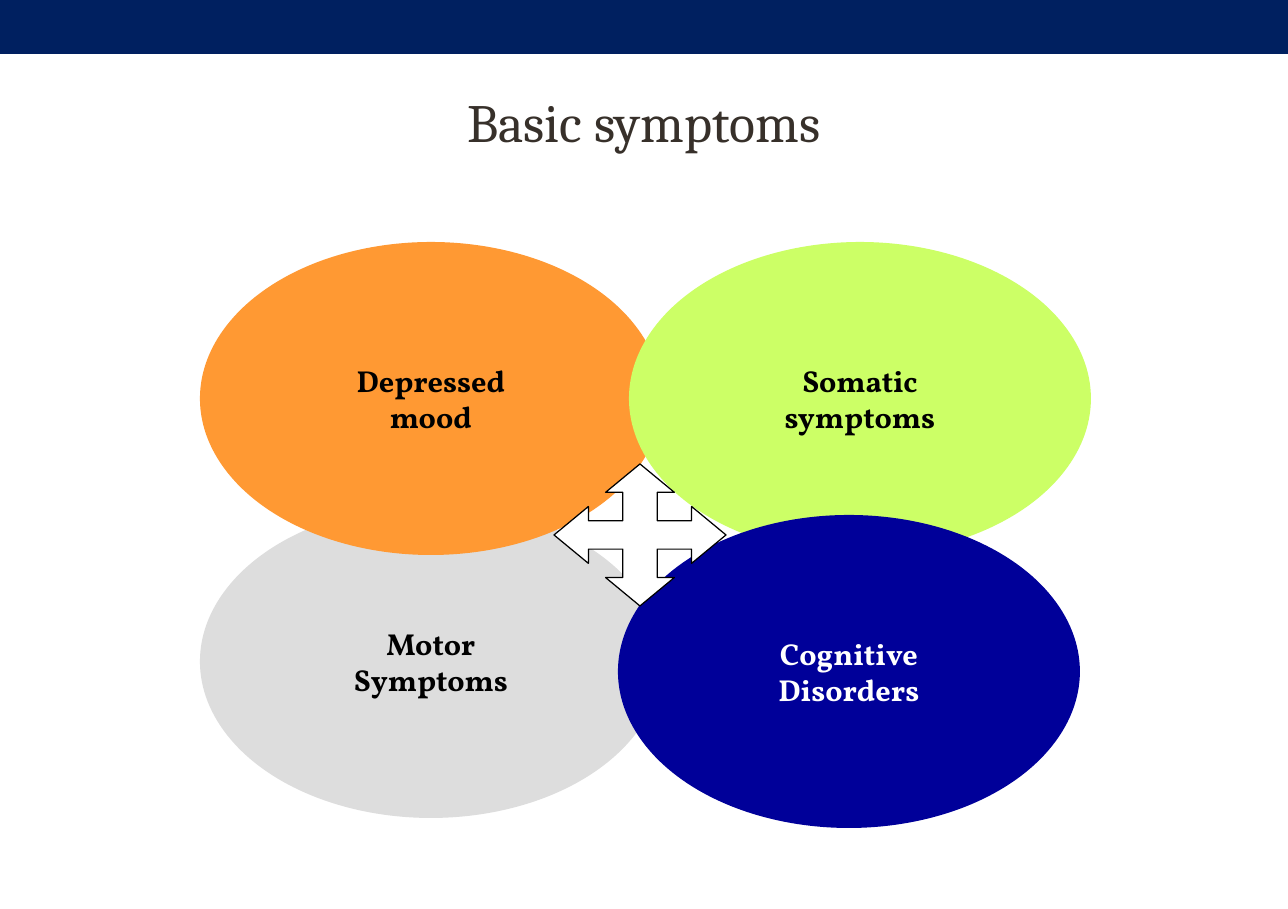
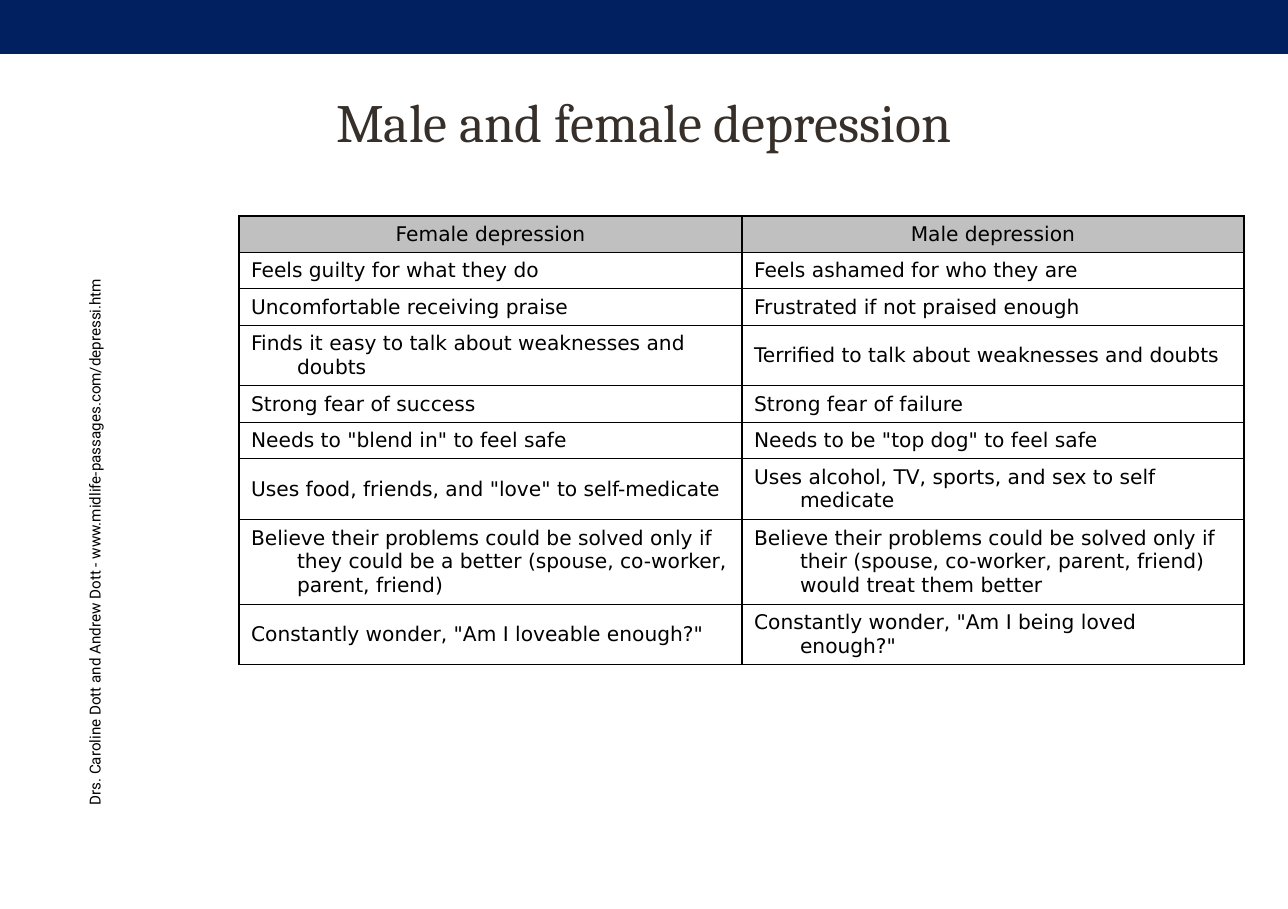
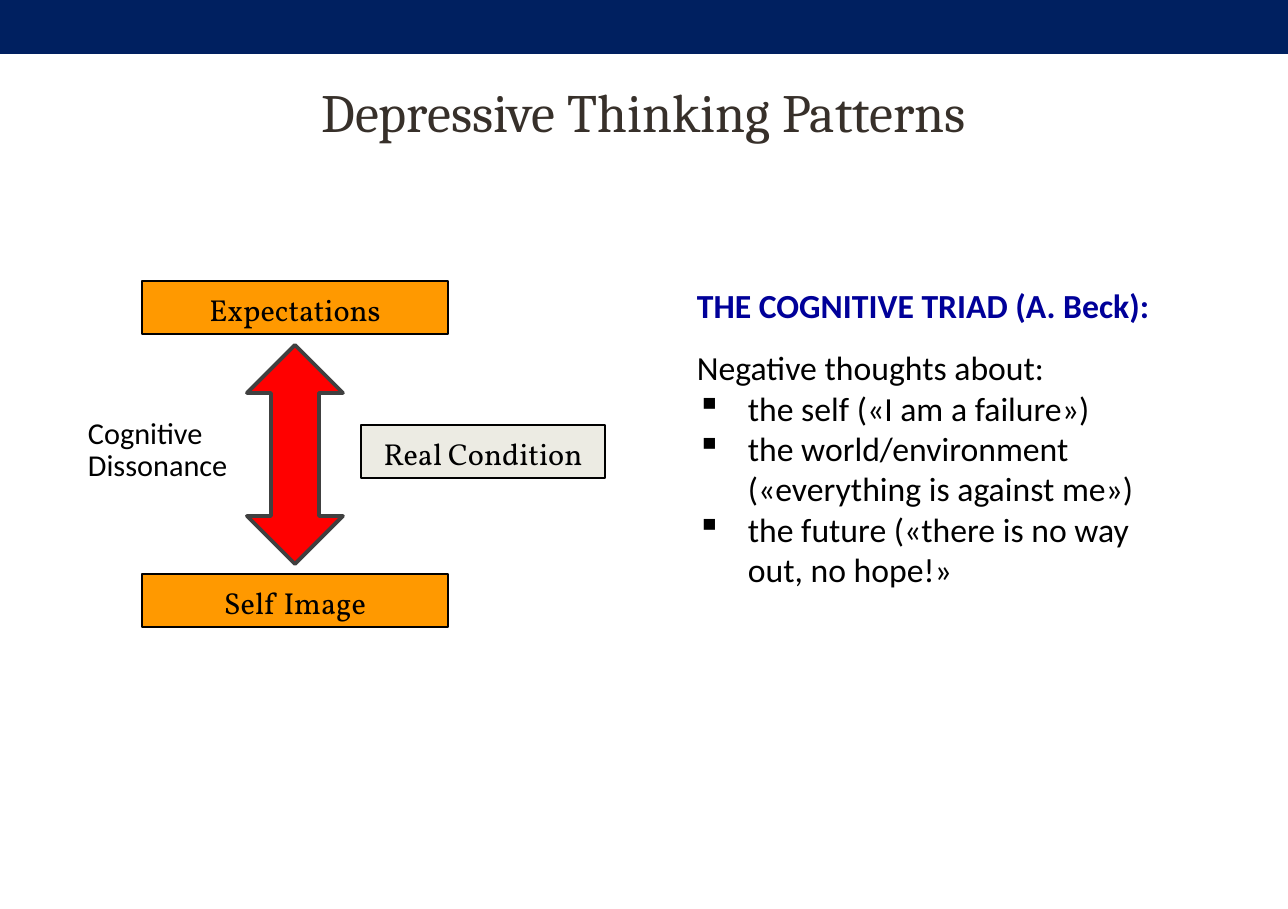
import dataclasses

import lxml.etree
import pptx
import pptx.dml.color
import pptx.enum.shapes
import pptx.enum.text
import pptx.oxml.ns
import pptx.util

ALIGN = pptx.enum.text.PP_ALIGN
ANCHOR = pptx.enum.text.MSO_ANCHOR
SHAPE = pptx.enum.shapes.MSO_SHAPE
EMU_PER_PX = 914400 / 121.2


@dataclasses.dataclass(frozen=True)
class Type:
    """A font with its size, colour and weight."""
    font: str
    size: int
    color: str = "000000"
    bold: bool = False


@dataclasses.dataclass(frozen=True)
class Theme:
    """Colours and type styles of the deck."""
    band: str = "002060"
    white: str = "FFFFFF"
    black: str = "000000"
    gray: str = "DDDDDD"
    orange: str = "FF9933"
    lime: str = "CCFF66"
    navy: str = "000099"
    header: str = "C0C0C0"
    amber: str = "FF9900"
    stone: str = "ECEBE3"
    red: str = "FF0000"
    charcoal: str = "404040"
    title: Type = Type("Cambria", 32, "37302A")
    symptom: Type = Type("Vollkorn", 18, bold=True)
    symptom_light: Type = Type("Vollkorn", 18, "FFFFFF", True)
    label: Type = Type("Vollkorn", 18)
    cell: Type = Type("DejaVu Sans", 12)
    source: Type = Type("Roboto", 9)
    note: Type = Type("Calibri", 18)
    body: Type = Type("Calibri", 20)
    heading: Type = Type("Calibri", 20, "000099", True)


THEME = Theme()


def px(length):
    """Turn px into EMU."""
    return pptx.util.Emu(round(length * EMU_PER_PX))


def rgb(color):
    """Turn a hex string into a colour."""
    return pptx.dml.color.RGBColor.from_string(color)


def add_element(parent, tag, **attributes):
    """Append a DrawingML element."""
    return lxml.etree.SubElement(parent, pptx.oxml.ns.qn(tag), attributes)


class Deck:
    """Holds the presentation and draws on the current page."""

    def __init__(self, width, height):
        """Start an empty deck."""
        self.deck = pptx.Presentation()
        self.deck.slide_width = px(width)
        self.deck.slide_height = px(height)
        self.page = None

    def add_page(self, title, title_height=153):
        """Add a page with its band and title."""
        self.page = self.deck.slides.add_slide(self.deck.slide_layouts[6])
        self.shape(SHAPE.RECTANGLE, (-25, -13, 1370, 67), THEME.band)
        self.text((64, 44, 1160, title_height), [title], THEME.title,
                  align=ALIGN.CENTER, anchor=ANCHOR.MIDDLE)

    def write_para(self, para, text, style, align=ALIGN.LEFT, spacing=None, hang=0, bullet=None):
        """Fill one paragraph, breaking lines at newlines."""
        para.alignment = align
        if spacing:
            para.line_spacing = spacing
        if hang:
            properties = para._p.get_or_add_pPr()
            properties.set("marL", str(px(hang)))
            properties.set("indent", str(-px(hang)))
            if bullet:
                add_element(properties, "a:buChar", char=bullet)
        for index, line in enumerate(text.split("\n")):
            if index:
                para.add_line_break()
            span = para.add_run()
            span.text = line
            span.font.name = style.font
            span.font.size = pptx.util.Pt(style.size)
            span.font.bold = style.bold
            span.font.color.rgb = rgb(style.color)

    def text(self, place, lines, style, anchor=ANCHOR.TOP, wrap=True, rotation=0, **layout):
        """Add a text box with one paragraph per line."""
        box = self.page.shapes.add_textbox(*map(px, place))
        box.rotation = rotation
        frame = box.text_frame
        frame.word_wrap = wrap
        frame.vertical_anchor = anchor
        for index, line in enumerate(lines):
            para = frame.add_paragraph() if index else frame.paragraphs[0]
            self.write_para(para, line, style, **layout)
        return box

    def bullets(self, place, lead, items, style, hang):
        """Add a lead line followed by bulleted items."""
        box = self.text(place, [lead], style, hang=hang)
        for item in items:
            para = box.text_frame.add_paragraph()
            self.write_para(para, item, style, hang=hang, bullet="▪")

    def paint(self, shape, fill, line=None, weight=0.75):
        """Set fill and outline and drop the shadow."""
        shape.shadow.inherit = False
        shape.fill.solid()
        shape.fill.fore_color.rgb = rgb(fill)
        if line:
            shape.line.color.rgb = rgb(line)
            shape.line.width = pptx.util.Pt(weight)
        else:
            shape.line.fill.background()

    def shape(self, kind, place, fill, line=None, weight=0.75):
        """Add a preset shape."""
        shape = self.page.shapes.add_shape(kind, *map(px, place))
        self.paint(shape, fill, line, weight)
        return shape

    def labelled(self, kind, place, fill, text, style, line=None, spacing=None, wrap=True):
        """Add a preset shape with centred text."""
        frame = self.shape(kind, place, fill, line).text_frame
        frame.word_wrap = wrap
        frame.vertical_anchor = ANCHOR.MIDDLE
        self.write_para(frame.paragraphs[0], text, style, ALIGN.CENTER, spacing)

    def four_way_arrow(self, place, fill, line):
        """Add a four-way arrow by turning one arm about the centre of a 10 by 10 grid."""
        left, top, width, height = place
        arm = [(4, 4), (4, 2), (3, 2), (5, 0), (7, 2), (6, 2)]
        points = []
        for _ in range(4):
            points += arm
            arm = [(10 - y, x) for x, y in arm]
        builder = self.page.shapes.build_freeform(
            *points[0], scale=(px(width / 10), px(height / 10)))
        builder.add_line_segments(points[1:], close=True)
        self.paint(builder.convert_to_shape(px(left), px(top)), fill, line)

    def table(self, left, top, widths, heights, rows, style, hang):
        """Add a bordered table with a shaded header row."""
        frame = self.page.shapes.add_table(
            len(rows), len(widths), px(left), px(top), px(sum(widths)), px(sum(heights)))
        table = frame.table
        table.first_row = table.horz_banding = False
        for column, width in zip(table.columns, widths):
            column.width = px(width)
        for row_index, (row, height) in enumerate(zip(rows, heights)):
            table.rows[row_index].height = px(height)
            for column_index, text in enumerate(row):
                cell = table.cell(row_index, column_index)
                self.border(cell)
                cell.vertical_anchor = ANCHOR.MIDDLE
                if row_index:
                    cell.fill.background()
                else:
                    cell.fill.solid()
                    cell.fill.fore_color.rgb = rgb(THEME.header)
                align = ALIGN.LEFT if row_index else ALIGN.CENTER
                self.write_para(cell.text_frame.paragraphs[0], text, style, align, hang=hang)

    def border(self, cell):
        """Outline a table cell."""
        properties = cell._tc.get_or_add_tcPr()
        for side in "LRTB":
            line = add_element(properties, f"a:ln{side}", w=str(pptx.util.Pt(0.75)))
            fill = add_element(line, "a:solidFill")
            add_element(fill, "a:srgbClr", val=THEME.black)


def symptoms_page(deck):
    """Draw the four symptom groups."""
    deck.add_page("Basic symptoms")
    for left, top, fill, text, style in (
            (200, 505, THEME.gray, "Motor\nSymptoms", THEME.symptom),
            (200, 242, THEME.orange, "Depressed\nmood", THEME.symptom),
            (629, 242, THEME.lime, "Somatic\nsymptoms", THEME.symptom),
            (618, 515, THEME.navy, "Cognitive\nDisorders", THEME.symptom_light)):
        deck.labelled(SHAPE.OVAL, (left, top, 462, 313), fill, text, style, wrap=False)
    deck.four_way_arrow((554, 464, 172, 142), THEME.white, THEME.black)


def comparison_page(deck):
    """Draw the comparison table and its source."""
    deck.add_page("Male and female depression")
    rows = [
        ("Female depression", "Male depression"),
        ("Feels guilty for what they do", "Feels ashamed for who they are"),
        ("Uncomfortable receiving praise", "Frustrated if not praised enough"),
        ("Finds it easy to talk about weaknesses and doubts",
         "Terrified to talk about weaknesses and doubts"),
        ("Strong fear of success", "Strong fear of failure"),
        ('Needs to "blend in" to feel safe', 'Needs to be "top dog" to feel safe'),
        ('Uses food, friends, and "love" to self-medicate',
         "Uses alcohol, TV, sports, and sex to self medicate"),
        ("Believe their problems could be solved only if they could be a better "
         "(spouse, co-worker, parent, friend)",
         "Believe their problems could be solved only if their "
         "(spouse, co-worker, parent, friend) would treat them better"),
        ('Constantly wonder, "Am I loveable enough?"',
         'Constantly wonder, "Am I being loved enough?"'),
    ]
    line_counts = (1, 1, 1, 2, 1, 1, 2, 3, 2)
    heights = [12 + 24 * count for count in line_counts]
    deck.table(239, 216, (503, 502), heights, rows, THEME.cell, hang=46)
    deck.text((-206, 502, 601, 30),
              ["Drs. Caroline Dott and Andrew Dott - www.midlife-passages.com/depressi.htm"],
              THEME.source, rotation=270)


def thinking_page(deck):
    """Draw the dissonance diagram and the cognitive triad."""
    deck.add_page("Depressive Thinking Patterns", title_height=133)
    deck.bullets((685, 341, 508, 257), "Negative thoughts about:",
                 ("the self («I am a failure»)",
                  "the world/environment («everything is against me»)",
                  "the future («there is no way out, no hope!»"),
                 THEME.body, hang=51)
    deck.text((685, 279, 508, 53), ["THE COGNITIVE TRIAD (A. Beck):"], THEME.heading)
    for left, top, width, fill, text in (
            (142, 281, 306, THEME.amber, "Expectations"),
            (142, 574, 306, THEME.amber, "Self Image"),
            (361, 425, 244, THEME.stone, "Real Condition")):
        deck.labelled(SHAPE.RECTANGLE, (left, top, width, 53), fill, text, THEME.label,
                      line=THEME.black, spacing=1.1)
    deck.text((76, 412, 166, 79), ["Cognitive\nDissonance"], THEME.note,
              wrap=False, spacing=0.9)
    deck.shape(SHAPE.UP_DOWN_ARROW, (247, 345, 96, 219), THEME.red, THEME.charcoal, 2.25)


def main():
    """Build and save the deck."""
    deck = Deck(1288, 909)
    symptoms_page(deck)
    comparison_page(deck)
    thinking_page(deck)
    deck.deck.save("out.pptx")


if __name__ == "__main__":
    main()
